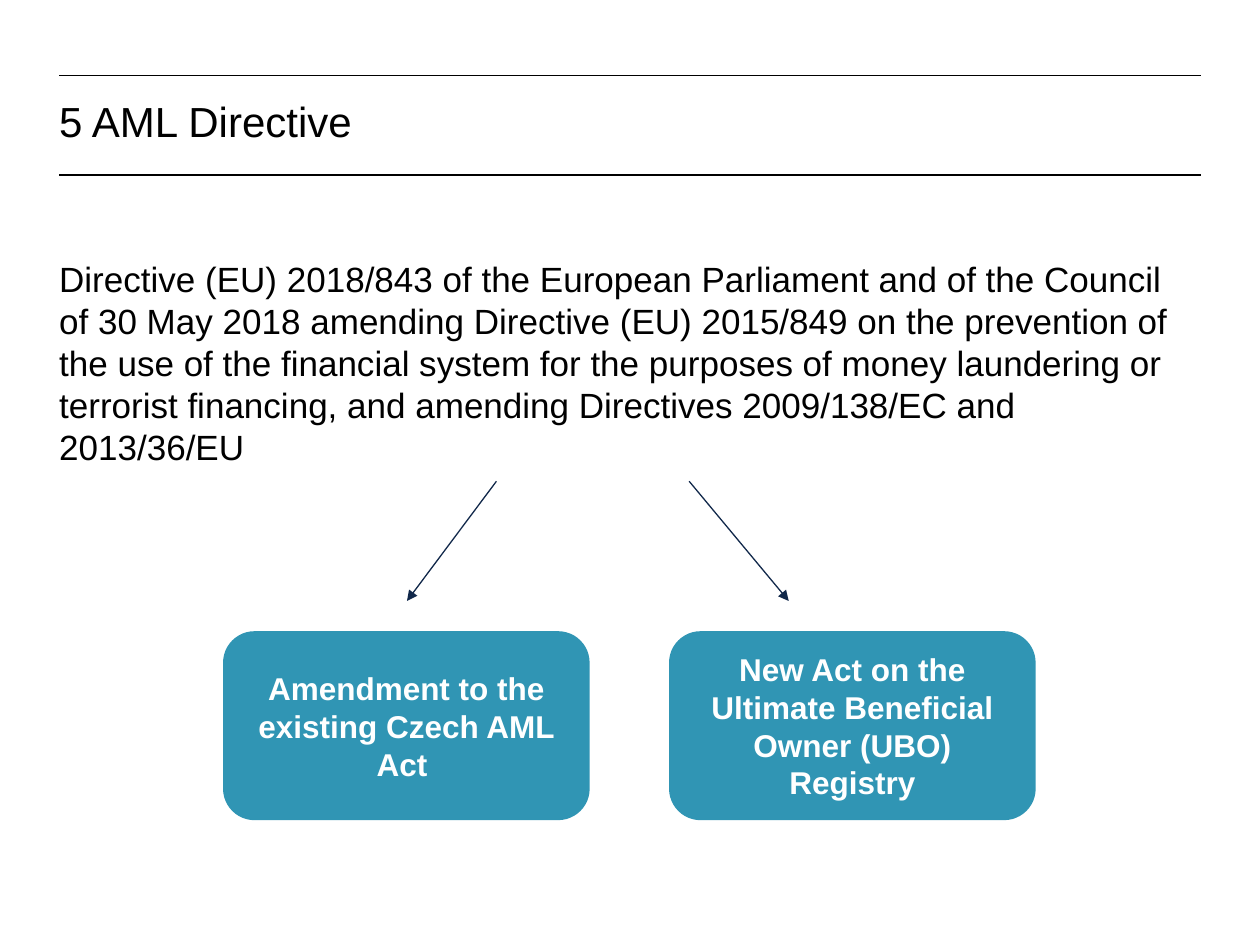
from pptx import Presentation
from pptx.dml.color import RGBColor
from pptx.enum.shapes import MSO_CONNECTOR, MSO_SHAPE
from pptx.enum.text import MSO_ANCHOR, PP_ALIGN
from pptx.oxml.ns import qn
from pptx.util import Inches, Pt
from lxml import etree

STRAIGHT = MSO_CONNECTOR.STRAIGHT
ROUNDED = MSO_SHAPE.ROUNDED_RECTANGLE
TOP, MIDDLE = MSO_ANCHOR.TOP, MSO_ANCHOR.MIDDLE
LEFT, CENTER = PP_ALIGN.LEFT, PP_ALIGN.CENTER
TITLE_ONLY = 5

BLACK, WHITE, NAVY, TEAL = "000000", "FFFFFF", "11284A", "3095B4"
NO_MARGINS = dict.fromkeys(
    ("margin_left", "margin_top", "margin_right", "margin_bottom"), 0)


def rgb(color):
    return RGBColor.from_string(color)


def set_values(target, values):
    for name, value in values.items():
        setattr(target, name, value)


class Deck:
    """Style and current slide; all lengths are percent of the slide's size."""

    font = "Arial"

    def __init__(self, width, height):
        self.prs = Presentation()
        self.prs.slide_width, self.prs.slide_height = width, height
        self.s = self.prs.slides.add_slide(
            self.prs.slide_layouts[TITLE_ONLY])

    def x(self, share):
        return round(self.prs.slide_width * share / 100)

    def y(self, share):
        return round(self.prs.slide_height * share / 100)

    def box(self, left, top, width, height):
        return self.x(left), self.y(top), self.x(width), self.y(height)

    def add_text(self, sp, text, size, color=BLACK, bold=False, align=LEFT,
                 spacing=None, frame=None):
        tf = sp.text_frame
        set_values(tf, {"word_wrap": True, **(frame or {})})
        p = tf.paragraphs[0]
        set_values(p, {"alignment": align, "line_spacing": spacing})
        r = p.add_run()
        r.text = text
        set_values(r.font, {"name": self.font, "size": Pt(size), "bold": bold})
        r.font.color.rgb = rgb(color)

    def title(self, area, text):
        sp = self.s.shapes.title
        set_values(sp, dict(zip(("left", "top", "width", "height"),
                                self.box(*area))))
        self.add_text(sp, text, 24, spacing=Pt(24),
                      frame={"vertical_anchor": MIDDLE, **NO_MARGINS})

    def body(self, area, text):
        sp = self.s.shapes.add_textbox(*self.box(*area))
        self.add_text(sp, text, 20,
                      frame={"vertical_anchor": TOP, **NO_MARGINS})

    def card(self, area, text):
        sp = self.s.shapes.add_shape(ROUNDED, *self.box(*area))
        sp.shadow.inherit = False
        sp.fill.solid()
        sp.fill.fore_color.rgb = rgb(TEAL)
        sp.line.fill.background()
        self.add_text(sp, text, 18, WHITE, True, CENTER,
                      frame={"vertical_anchor": MIDDLE})

    def line(self, start, end, color=BLACK, weight=1, arrow=False):
        (x1, y1), (x2, y2) = start, end
        c = self.s.shapes.add_connector(
            STRAIGHT, self.x(x1), self.y(y1), self.x(x2), self.y(y2))
        c.line.color.rgb = rgb(color)
        c.line.width = Pt(weight)
        sp_pr = c.element.spPr
        if arrow:
            etree.SubElement(sp_pr.find(qn("a:ln")), qn("a:tailEnd"),
                             type="triangle")
        etree.SubElement(sp_pr, qn("a:effectLst"))


def main():
    deck = Deck(Inches(10), Inches(7.5))
    margin = 4.7
    content = 100 - 2 * margin
    rule_top, rule_bottom = 8, 18.53

    for y in (rule_top, rule_bottom):
        deck.line((margin, y), (100 - margin, y))
    deck.title((margin, rule_top, content, rule_bottom - rule_top),
               "5 AML Directive")
    deck.body((margin, 27.2, content, 64.8),
              "Directive (EU) 2018/843 of the European Parliament and of the "
              "Council of 30 May 2018 amending Directive (EU) 2015/849 on the "
              "prevention of the use of the financial system for the purposes "
              "of money laundering or terrorist financing, and amending "
              "Directives 2009/138/EC and 2013/36/EU")

    card_width, card_top, card_height = 29.1, 66.8, 20
    arrow_top, arrow_bottom = 50.93, 63.6
    outcomes = (
        (17.7, 39.4, 32.3, "Amendment to the existing Czech AML Act "),
        (53.1, 54.7, 62.6,
         "New Act on the Ultimate Beneficial Owner (UBO) Registry"),
    )
    for left, arrow_from, arrow_to, text in outcomes:
        deck.line((arrow_from, arrow_top), (arrow_to, arrow_bottom),
                  NAVY, 0.75, arrow=True)
        deck.card((left, card_top, card_width, card_height), text)

    deck.prs.save("out.pptx")


if __name__ == "__main__":
    main()
